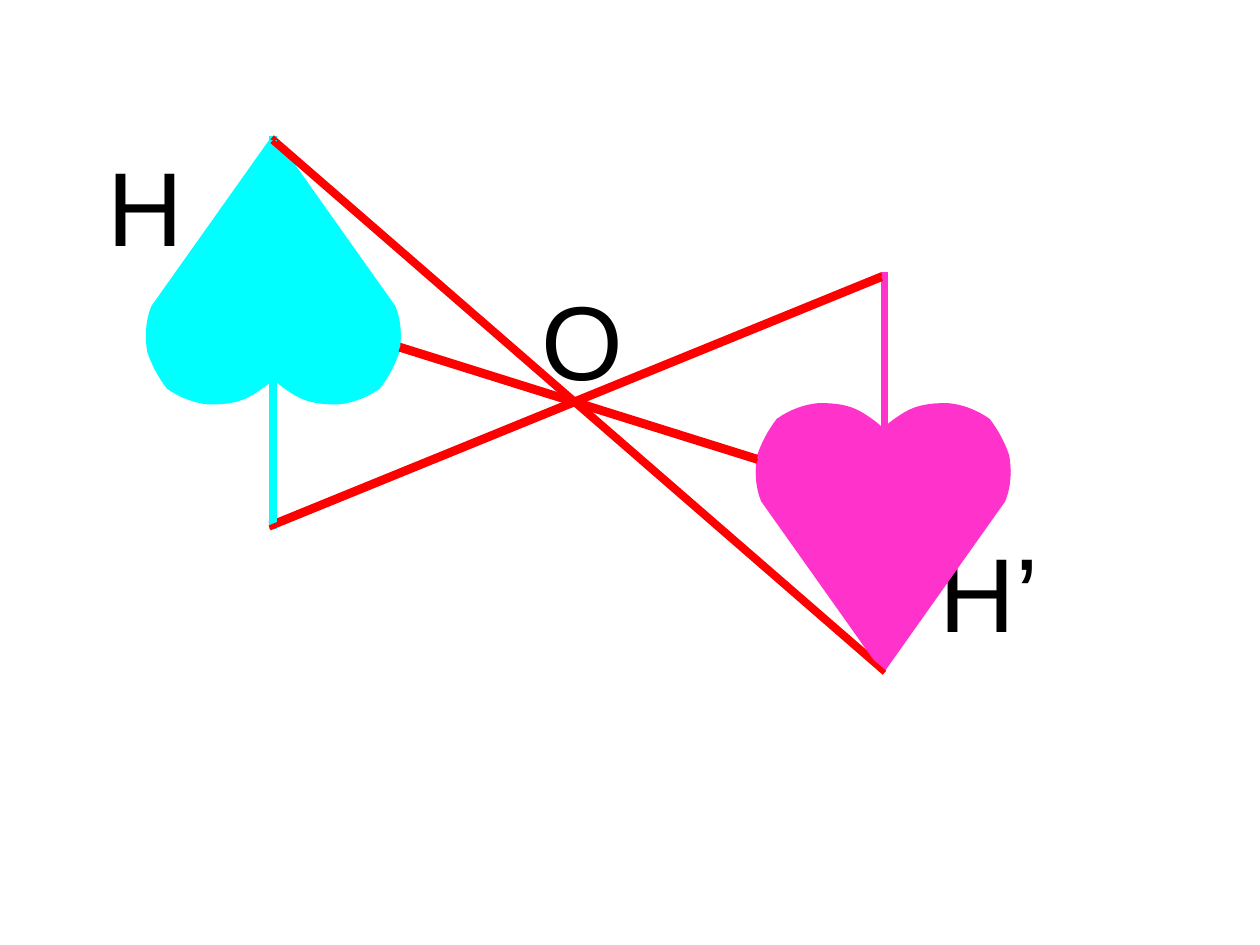
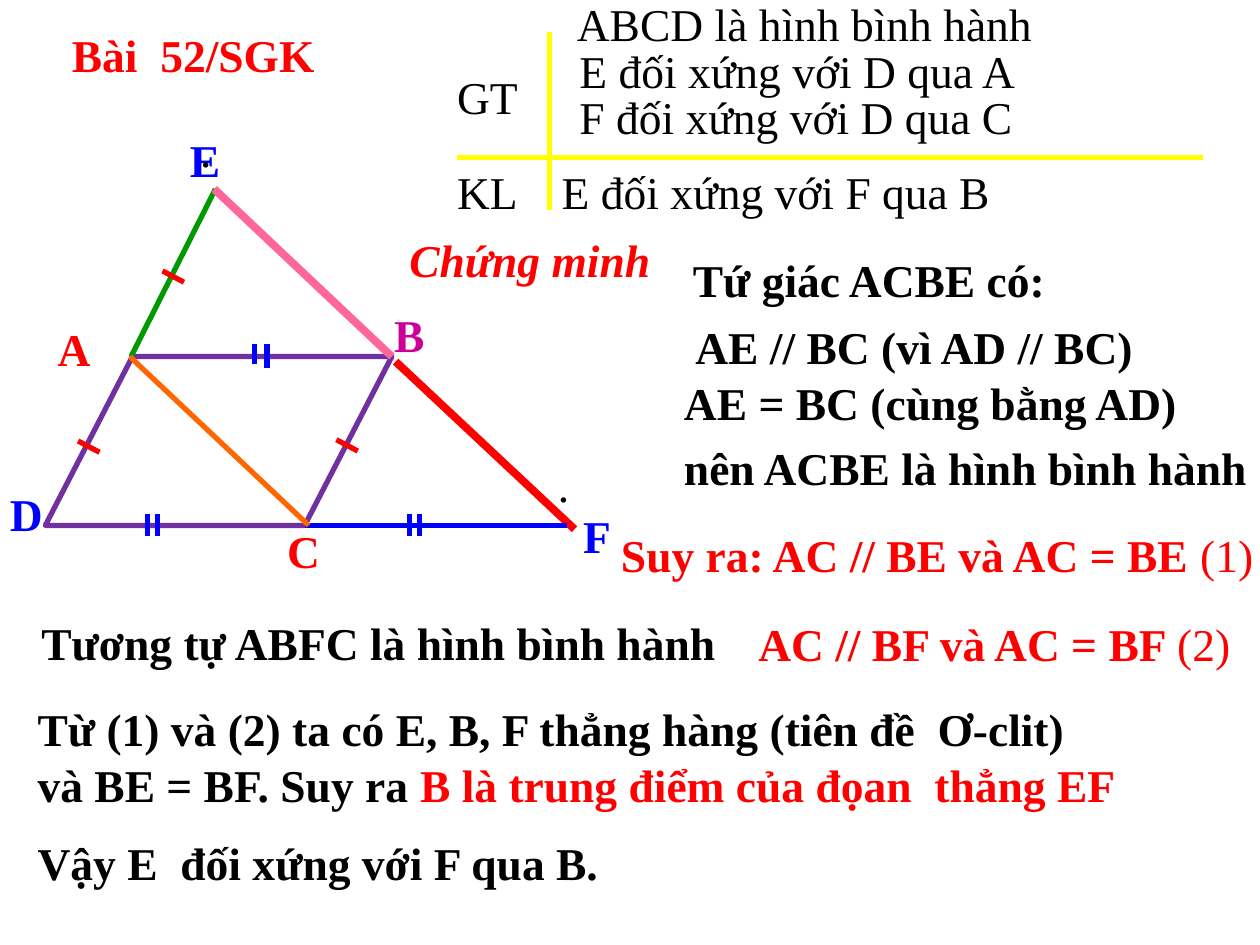
from dataclasses import dataclass

from lxml import etree
from pptx import Presentation
from pptx.dml.color import RGBColor
from pptx.enum.shapes import MSO_CONNECTOR, MSO_SHAPE
from pptx.enum.text import MSO_AUTO_SIZE, PP_ALIGN
from pptx.oxml.ns import qn
from pptx.util import Pt

PX = 9144
STRAIGHT = MSO_CONNECTOR.STRAIGHT
PARALLELOGRAM, RECTANGLE = MSO_SHAPE.PARALLELOGRAM, MSO_SHAPE.RECTANGLE
FIT_TEXT = MSO_AUTO_SIZE.SHAPE_TO_FIT_TEXT
LEFT, CENTER = PP_ALIGN.LEFT, PP_ALIGN.CENTER


@dataclass(frozen=True)
class Theme:
    black: RGBColor = RGBColor(0, 0, 0)
    white: RGBColor = RGBColor(255, 255, 255)
    red: RGBColor = RGBColor(255, 0, 0)
    blue: RGBColor = RGBColor(0, 0, 255)
    cyan: RGBColor = RGBColor(0, 255, 255)
    magenta: RGBColor = RGBColor(255, 51, 204)
    green: RGBColor = RGBColor(0, 153, 0)
    purple: RGBColor = RGBColor(112, 48, 160)
    plum: RGBColor = RGBColor(204, 0, 153)
    yellow: RGBColor = RGBColor(255, 255, 0)
    orange: RGBColor = RGBColor(255, 102, 0)
    pink: RGBColor = RGBColor(255, 102, 153)
    label_font: str = "Arial"
    body_font: str = "Times New Roman"
    label_size: float = 60
    body_size: float = 26
    thin: float = 3
    thick: float = 4.5


theme = Theme()


def add_line(slide, start, end, color, width=theme.thin):
    line = slide.shapes.add_connector(STRAIGHT, *(value * PX for value in start + end))
    line.line.color.rgb = color
    line.line.width = Pt(width)
    etree.SubElement(line._element.spPr, qn("a:effectLst"))


def add_text(slide, text, box, color=theme.black, bold=False, font=theme.body_font,
             size=theme.body_size, align=LEFT, spacing=None, shape=None):
    shape = shape or slide.shapes.add_textbox(*(value * PX for value in box))
    frame = shape.text_frame
    frame.word_wrap = True
    frame.auto_size = FIT_TEXT
    frame.text = text
    for paragraph in frame.paragraphs:
        paragraph.alignment = align
        paragraph.line_spacing = spacing
        if font == theme.body_font:
            before = etree.SubElement(paragraph._p.get_or_add_pPr(), qn("a:spcBef"))
            etree.SubElement(before, qn("a:spcPct"), val="50000")
        paragraph.font.name = font
        paragraph.font.size = Pt(size)
        paragraph.font.bold = bold
        paragraph.font.color.rgb = color
    return paragraph


presentation = Presentation()
presentation.slide_width = 1000 * PX
presentation.slide_height = 750 * PX
blank = presentation.slide_layouts[6]

slide = presentation.slides.add_slide(blank)

lobe = [
    (0, 0), (-4, -5), (-13, -11), (-18, -14),
    (-28, -20), (-39, -21), (-51, -21),
    (-62, -20), (-73, -16), (-83, -9),
    (-90, 0), (-95, 10), (-98, 19),
    (-100, 30), (-99, 41), (-95, 51),
]
heart = lobe + [(0, 185)] + [(-x, y) for x, y in reversed(lobe)]
tip = len(lobe)

hearts = [
    ((217, 295), -1, theme.cyan, (217, 108), (217, 417)),
    ((701, 343), 1, theme.magenta, (702, 526), (702, 216)),
]
rays = [((216, 109), (702, 531)), ((214, 416), (700, 218)), ((317, 274), (601, 363))]
labels = [
    ("H", (59, 107, 112, 95)),
    ("H’", (707, 414, 156, 114)),
    ("O", (384, 214, 156, 114)),
]
for shift, shift_labels in ((0, labels), (3, [])):
    for (notch_x, notch_y), direction, color, stem_start, stem_end in hearts:
        points = [((notch_x + direction * x) * PX, (notch_y + shift + direction * y) * PX)
                  for x, y in heart]
        builder = slide.shapes.build_freeform(*points[0], scale=1.0)
        builder.add_line_segments(points[1:], close=True)
        shape = builder.convert_to_shape()
        segments = list(shape._element.iter(qn("a:lnTo")))
        curved = segments[:tip - 1] + segments[tip + 1:]
        for first in range(0, len(curved), 3):
            curve = etree.Element(qn("a:cubicBezTo"))
            curved[first].addprevious(curve)
            for segment in curved[first:first + 3]:
                curve.append(segment[0])
                segment.getparent().remove(segment)
        shape.shadow.inherit = False
        shape.fill.solid()
        shape.fill.fore_color.rgb = color
        shape.line.color.rgb = color
        shape.line.width = Pt(theme.thin)
        add_line(slide, (stem_start[0], stem_start[1] + shift),
                 (stem_end[0], stem_end[1] + shift), color, theme.thick)
    for start, end in rays:
        add_line(slide, (start[0], start[1] + shift), (end[0], end[1] + shift), theme.red)
    for text, box in shift_labels:
        add_text(slide, text, box, font=theme.label_font, size=theme.label_size, align=CENTER)

slide = presentation.slides.add_slide(blank)

title_box = (20, 16, 267, 54)
title = slide.shapes.add_shape(RECTANGLE, *(value * PX for value in title_box))
title.shadow.inherit = False
title.fill.solid()
title.fill.fore_color.rgb = theme.white
title.line.color.rgb = theme.white
title.line.width = Pt(theme.thin)
add_text(slide, "Bài  52/SGK", title_box, theme.red, True, align=CENTER, shape=title)

add_line(slide, (314, 287), (456, 420), theme.red, theme.thick)
parallelogram = slide.shapes.add_shape(PARALLELOGRAM, 36 * PX, 283 * PX, 275 * PX, 134 * PX)
parallelogram.adjustments[0] = 0.516
parallelogram.shadow.inherit = False
parallelogram.fill.background()
parallelogram.line.color.rgb = theme.purple
parallelogram.line.width = Pt(theme.thin)

for start, end, color in [
    ((171, 150), (104, 283), theme.green),
    ((242, 417), (450, 417), theme.blue),
    ((103, 283), (245, 417), theme.orange),
    ((363, 125), (955, 125), theme.yellow),
    ((436, 25), (436, 167), theme.yellow),
]:
    add_line(slide, start, end, color)
add_line(slide, (170, 150), (311, 283), theme.pink, theme.thick)

for x, y in [(129, 215), (267, 349), (62, 350)]:
    add_line(slide, (x, y), (x + 17, y + 9), theme.red)
for x, top, bottom in [(117, 408, 425), (125, 408, 425), (325, 408, 425),
                       (333, 408, 425), (202, 273, 289), (212, 273, 292)]:
    add_line(slide, (x, top), (x, bottom), theme.blue)

for name, left, top, width, color in [
    ("A", 36, 250, 95, theme.red),
    ("B", 303, 239, 100, theme.plum),
    ("C", 218, 410, 54, theme.red),
    ("D", -2, 381, 100, theme.blue),
    ("E", 141, 100, 100, theme.blue),
    ("F", 453, 398, 100, theme.blue),
]:
    add_text(slide, name, (left, top, width, 53), color, True)

for text, left, top, width in [
    (".", 149, 92, 100),
    (".", 433, 358, 100),
    ("GT", 353, 50, 104),
    ("KL", 353, 125, 104),
    ("ABCD là hình bình hành", 448, -8, 508),
    ("E đối xứng với D qua A", 450, 29, 477),
    ("F đối xứng với D qua C", 450, 66, 550),
    ("E đối xứng với F qua B", 436, 125, 457),
]:
    add_text(slide, text, (left, top, width, 53))

heading = add_text(slide, "Chứng minh", (315, 179, 227, 53), theme.red, True)
heading.font.italic = True

for text, left, top, width in [
    ("Tứ giác ACBE có:", 540, 195, 335),
    ("AE // BC (vì AD // BC)", 542, 248, 458),
    ("AE = BC (cùng bằng AD)", 533, 293, 558),
    ("nên ACBE là hình bình hành", 533, 344, 482),
    ("Tương tự ABFC là hình bình hành", 23, 483, 584),
]:
    add_text(slide, text, (left, top, width, 53), bold=True)

for text, number, box in [
    ("Suy ra: AC // BE và AC = BE ", "(1)", (483, 413, 529, 54)),
    ("AC // BF và AC = BF ", "(2)", (592, 484, 407, 53)),
]:
    run = add_text(slide, text, box, theme.red, True).add_run()
    run.text = number
    run.font.bold = False

conclusion = add_text(
    slide,
    "Từ (1) và (2) ta có E, B, F thẳng hàng (tiên đề  Ơ-clit)\nvà BE = BF. Suy ra ",
    (20, 567, 907, 86), bold=True, spacing=0.6)
run = conclusion.add_run()
run.text = "B là trung điểm của đọan  thẳng EF"
run.font.color.rgb = theme.red
add_text(slide, "Vậy E  đối xứng với F qua B.", (20, 670, 645, 42), bold=True, spacing=0.7)

presentation.save("out.pptx")
